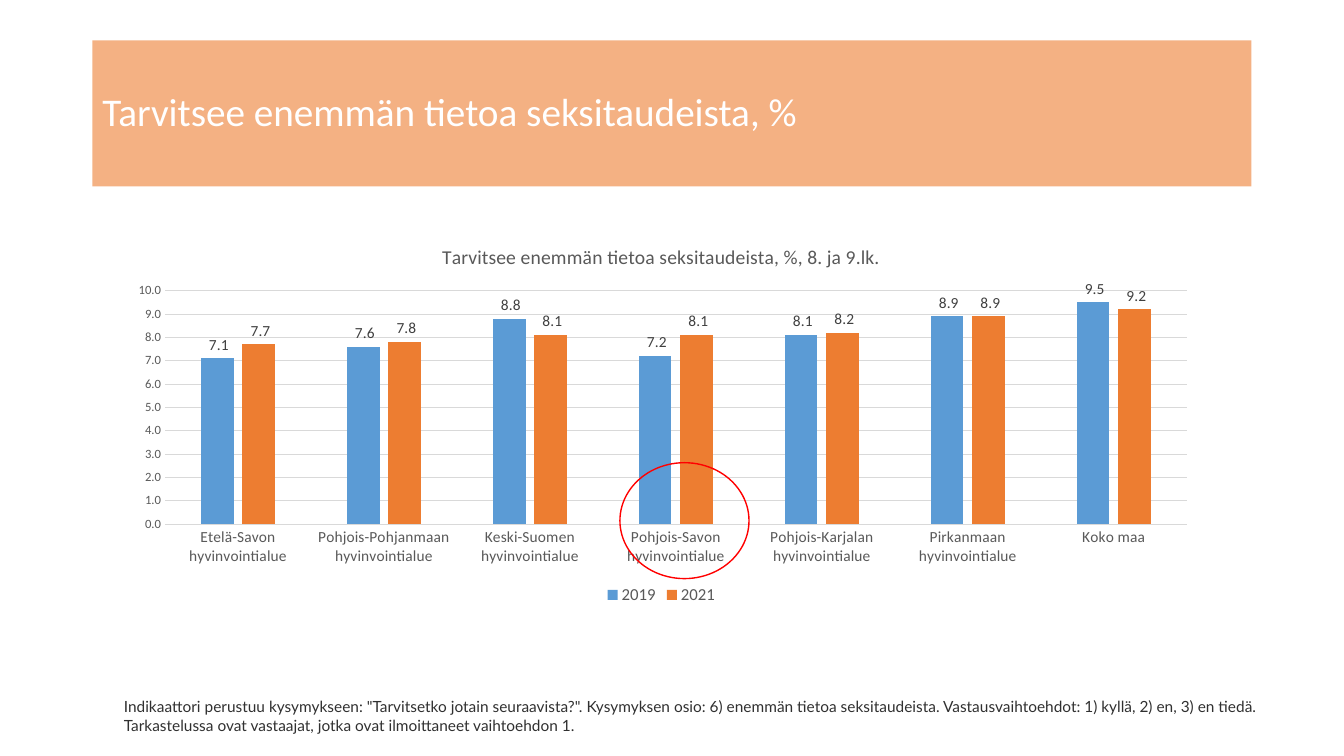
from pptx import Presentation
from pptx.chart.data import CategoryChartData
from pptx.dml.color import RGBColor
from pptx.enum import chart as ch, shapes, text
from pptx.util import Pt

HEADING = "Tarvitsee enemmän tietoa seksitaudeista, %"
CHART_TITLE = "Tarvitsee enemmän tietoa seksitaudeista, %, 8. ja 9.lk."
FOOTNOTE = (
    'Indikaattori perustuu kysymykseen: "Tarvitsetko jotain seuraavista?". '
    "Kysymyksen osio: 6) enemmän tietoa seksitaudeista. "
    "Vastausvaihtoehdot: 1) kyllä, 2) en, 3) en tiedä. "
    "Tarkastelussa ovat vastaajat, jotka ovat ilmoittaneet vaihtoehdon 1."
)
AREAS = [f"{area} hyvinvointialue" for area in (
    "Etelä-Savon", "Pohjois-Pohjanmaan", "Keski-Suomen",
    "Pohjois-Savon", "Pohjois-Karjalan", "Pirkanmaan")] + ["Koko maa"]

PEACH = RGBColor(0xF4, 0xB1, 0x83)
BLUE = RGBColor(0x5B, 0x9B, 0xD5)
ORANGE = RGBColor(0xED, 0x7D, 0x31)
RED = RGBColor(0xFF, 0x00, 0x00)
WHITE = RGBColor(0xFF, 0xFF, 0xFF)
INK = RGBColor(0x30, 0x30, 0x30)
LABEL_GRAY = RGBColor(0x40, 0x40, 0x40)
AXIS_GRAY = RGBColor(0x59, 0x59, 0x59)
GRID_GRAY = RGBColor(0xD9, 0xD9, 0xD9)

YEARS = [
    ("2019", BLUE, (7.1, 7.6, 8.8, 7.2, 8.1, 8.9, 9.5)),
    ("2021", ORANGE, (7.7, 7.8, 8.1, 8.1, 8.2, 8.9, 9.2)),
]
NUMBER_FORMAT = r"#\ ##0.0"

# left, top, width, height in points
HEADING_BOX = (66, 28.8, 828, 104.4)
CHART_BOX = (81.4, 162, 781.9, 272.9)
HIGHLIGHT_BOX = (442.8, 330.5, 92.2, 82.8)
FOOTNOTE_BOX = (81.4, 494.6, 825.8, 33.8)


def points(box):
    return [Pt(length) for length in box]


def set_font(font, size, color, name="Calibri"):
    font.size, font.name, font.bold = Pt(size), name, False
    font.color.rgb = color


def set_line(line, color, width):
    line.color.rgb = color
    line.width = Pt(width)


def add_heading(slide):
    banner = slide.shapes.add_shape(shapes.MSO_SHAPE.RECTANGLE, *points(HEADING_BOX))
    banner.shadow.inherit = False
    banner.fill.solid()
    banner.fill.fore_color.rgb = PEACH
    banner.line.fill.background()
    frame = banner.text_frame
    frame.word_wrap = True
    frame.vertical_anchor = text.MSO_ANCHOR.MIDDLE
    heading = frame.paragraphs[0]
    heading.text = HEADING
    heading.alignment = text.PP_ALIGN.LEFT
    heading.line_spacing = 0.9
    set_font(heading.font, 28, WHITE)


def add_footnote(slide):
    frame = slide.shapes.add_textbox(*points(FOOTNOTE_BOX)).text_frame
    frame.word_wrap = True
    footnote = frame.paragraphs[0]
    footnote.text = FOOTNOTE
    set_font(footnote.font, 11, INK, "Lato")


def add_year_chart(slide):
    data = CategoryChartData(number_format=NUMBER_FORMAT)
    data.categories = AREAS
    for year, _, shares in YEARS:
        data.add_series(year, shares)
    chart = slide.shapes.add_chart(
        ch.XL_CHART_TYPE.COLUMN_CLUSTERED, *points(CHART_BOX), data).chart
    set_font(chart.font, 10, AXIS_GRAY)

    chart.has_title = True
    title = chart.chart_title.text_frame.paragraphs[0]
    title.text = CHART_TITLE
    set_font(title.font, 14, AXIS_GRAY)
    chart.chart_title.include_in_layout = False

    chart.has_legend = True
    chart.legend.position = ch.XL_LEGEND_POSITION.BOTTOM
    chart.legend.include_in_layout = False
    set_font(chart.legend.font, 12, AXIS_GRAY)

    areas, shares = chart.category_axis, chart.value_axis
    for axis, size in ((areas, 11), (shares, 9)):
        axis.major_tick_mark = axis.minor_tick_mark = ch.XL_TICK_MARK.NONE
        set_font(axis.tick_labels.font, size, AXIS_GRAY)
    set_line(areas.format.line, GRID_GRAY, 0.75)
    shares.format.line.fill.background()
    set_line(shares.major_gridlines.format.line, GRID_GRAY, 0.75)
    shares.minimum_scale, shares.maximum_scale, shares.major_unit = 0, 10, 1
    shares.tick_labels.number_format = NUMBER_FORMAT
    shares.tick_labels.number_format_is_linked = False

    plot = chart.plots[0]
    plot.vary_by_categories = False
    plot.gap_width, plot.overlap = 219, -27
    for series, (_, color, _) in zip(plot.series, YEARS):
        series.format.fill.solid()
        series.format.fill.fore_color.rgb = color
        labels = series.data_labels
        labels.show_value = True
        labels.position = ch.XL_LABEL_POSITION.OUTSIDE_END
        labels.number_format = NUMBER_FORMAT
        labels.number_format_is_linked = False
        set_font(labels.font, 11, LABEL_GRAY)


def add_highlight(slide):
    ring = slide.shapes.add_shape(shapes.MSO_SHAPE.OVAL, *points(HIGHLIGHT_BOX))
    ring.shadow.inherit = False
    ring.fill.background()
    set_line(ring.line, RED, 1)


def main():
    deck = Presentation()
    deck.slide_width, deck.slide_height = Pt(960), Pt(540)
    slide = deck.slides.add_slide(deck.slide_layouts[6])
    add_heading(slide)
    add_footnote(slide)
    add_year_chart(slide)
    add_highlight(slide)
    deck.save("out.pptx")


if __name__ == "__main__":
    main()
